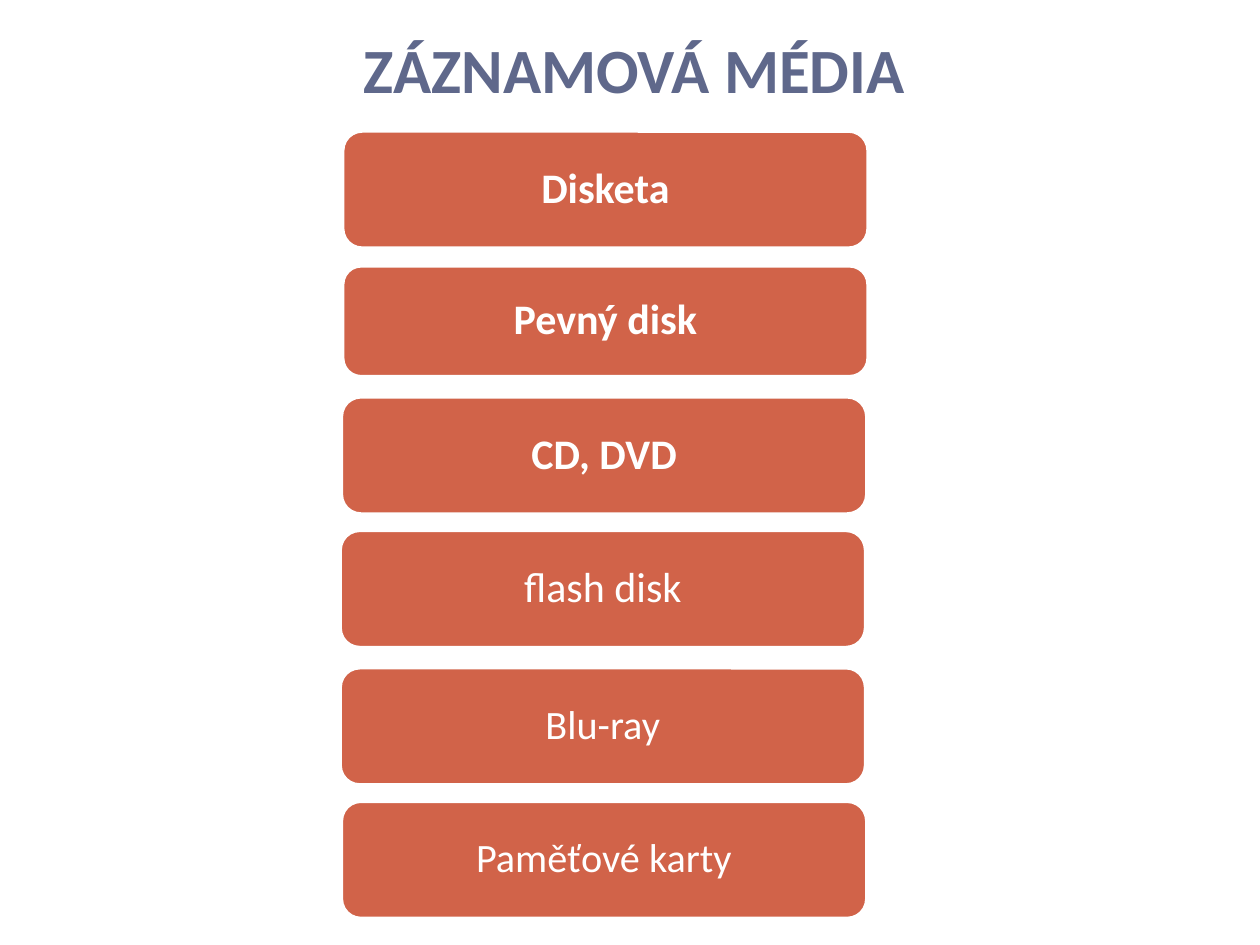
from dataclasses import dataclass

from pptx import Presentation
from pptx import util as u
from pptx.dml.color import RGBColor
from pptx.enum import shapes, text

COLUMNS, ROWS = 100, 75
WIDTH, HEIGHT = u.Inches(10), u.Inches(7.5)
WHITE, ORANGE, SLATE = "FFFFFF", "D16349", "5F688B"


@dataclass(frozen=True)
class Medium:
    label: str
    left: float
    top: float
    height: float = 9.3
    size: int = 24
    bold: bool = False


MEDIA = [
    Medium("Disketa", 27.2, 10.4, bold=True),
    Medium("Pevný disk", 27.2, 21.1, height=8.8, bold=True),
    Medium("CD, DVD", 27.1, 31.5, bold=True),
    Medium("flash disk", 27, 42.1),
    Medium("Blu-ray", 27, 53, size=23),
    Medium("Paměťové karty", 27.1, 63.6, size=23),
]


def color(value: str) -> RGBColor:
    return RGBColor.from_string(value)


def place(left: float, top: float, width: float, height: float) -> tuple:
    column, row = WIDTH / COLUMNS, HEIGHT / ROWS
    return (u.Emu(round(left * column)), u.Emu(round(top * row)),
            u.Emu(round(width * column)), u.Emu(round(height * row)))


def write(shape, content: str, *, size: int, fill: str, bold: bool,
          spacing, anchor, margins: tuple) -> None:
    frame = shape.text_frame
    frame.word_wrap = True
    frame.vertical_anchor = anchor
    frame.margin_left = frame.margin_right = u.Inches(margins[0])
    frame.margin_top = frame.margin_bottom = u.Inches(margins[1])
    paragraph = frame.paragraphs[0]
    paragraph.alignment = text.PP_ALIGN.CENTER
    paragraph.line_spacing = spacing
    run = paragraph.add_run()
    run.text = content
    run.font.name = "Calibri"
    run.font.size = u.Pt(size)
    run.font.bold = bold
    run.font.color.rgb = color(fill)


def draw_title(slide, content: str) -> None:
    title = slide.shapes.add_textbox(*place(4.3, 2.1, 92.1, 6.8))
    write(title, content, size=36, fill=SLATE, bold=True, spacing=u.Pt(20),
          anchor=text.MSO_ANCHOR.BOTTOM, margins=(0.1, 0.05))


def draw_medium(slide, medium: Medium) -> None:
    box = slide.shapes.add_shape(
        shapes.MSO_SHAPE.ROUNDED_RECTANGLE,
        *place(medium.left, medium.top, 41.7, medium.height))
    box.shadow.inherit = False
    box.adjustments[0] = 1 / 6
    box.fill.solid()
    box.fill.fore_color.rgb = color(ORANGE)
    box.line.color.rgb = color(WHITE)
    box.line.width = u.Pt(2)
    write(box, medium.label, size=medium.size, fill=WHITE, bold=medium.bold,
          spacing=0.9, anchor=text.MSO_ANCHOR.MIDDLE, margins=(0.14, 0.1))


def main() -> None:
    presentation = Presentation()
    presentation.slide_width, presentation.slide_height = WIDTH, HEIGHT
    slide = presentation.slides.add_slide(presentation.slide_layouts[6])
    draw_title(slide, "ZÁZNAMOVÁ MÉDIA")
    for medium in MEDIA:
        draw_medium(slide, medium)
    presentation.save("out.pptx")


if __name__ == "__main__":
    main()
